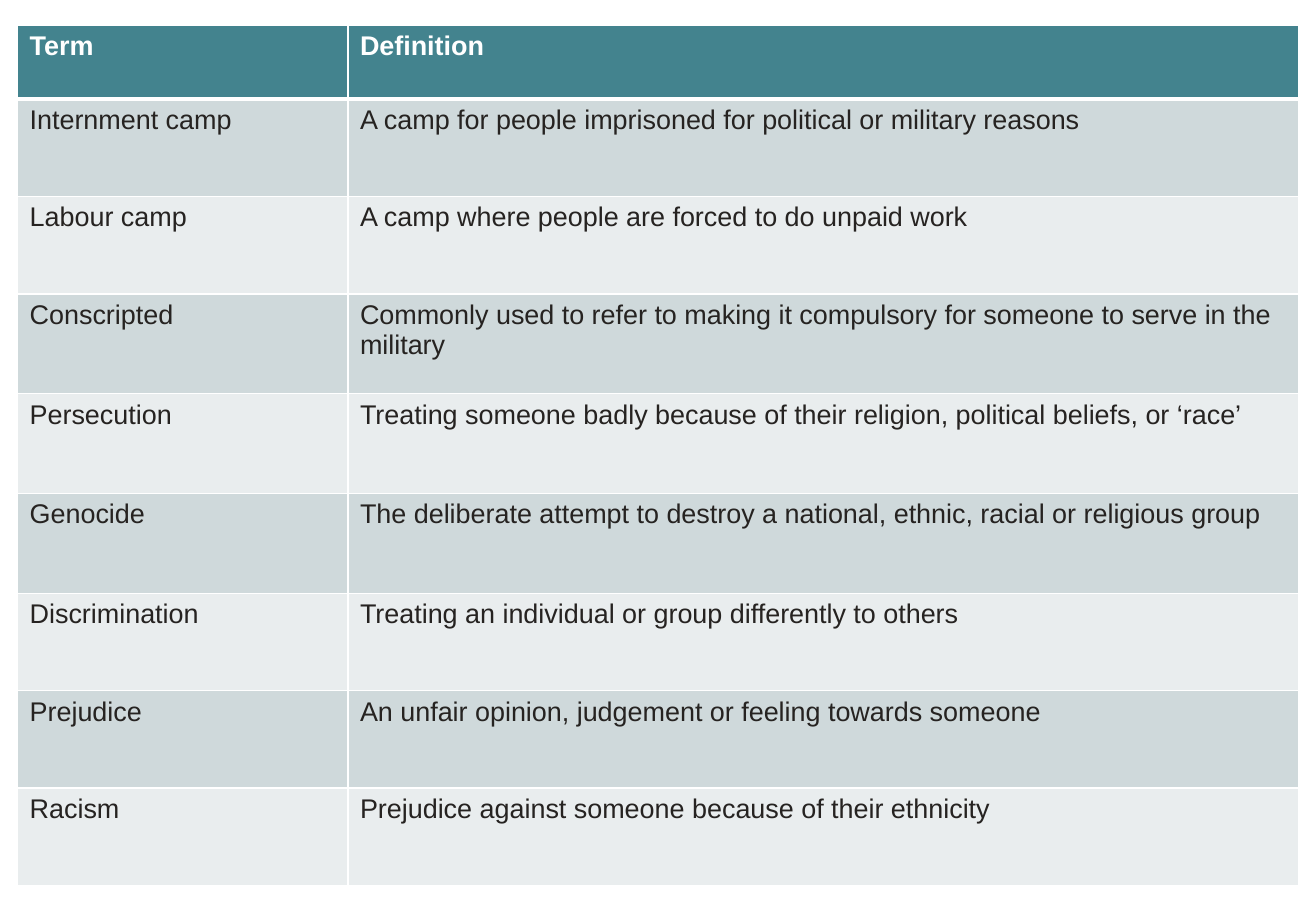
"""Build a one-slide glossary table of terms and definitions."""
import pptx
import pptx.dml.color
import pptx.oxml
import pptx.oxml.ns
import pptx.util

Pt = pptx.util.Pt

COLOURS = {
    "header": "43838E",
    "odd_row": "CFD9DB",
    "even_row": "E9EDEE",
    "rule": "FFFFFF",
    "header_text": "FFFFFF",
    "body_text": "262321",
}

GLOSSARY = [
    ("Term", "Definition"),
    ("Internment camp", "A camp for people imprisoned for political or military reasons"),
    ("Labour camp", "A camp where people are forced to do unpaid work"),
    ("Conscripted", "Commonly used to refer to making it compulsory for someone to serve in the military"),
    ("Persecution", "Treating someone badly because of their religion, political beliefs, or ‘race’"),
    ("Genocide", "The deliberate attempt to destroy a national, ethnic, racial or religious group"),
    ("Discrimination", "Treating an individual or group differently to others"),
    ("Prejudice", "An unfair opinion, judgement or feeling towards someone"),
    ("Racism", "Prejudice against someone because of their ethnicity"),
]

COLUMN_WIDTHS = [195.8, 563.8]
ROW_HEIGHTS = [43.6] + [57.7] * 2 + [59.2] * 3 + [57.7] * 3


def rgb(name):
    return pptx.dml.color.RGBColor.from_string(COLOURS[name])


def write_text(frame, text, size=16, font="Arial", colour="body_text", bold=False):
    run = frame.paragraphs[0].add_run()
    run.text = text
    run.font.size = Pt(size)
    run.font.name = font
    run.font.bold = bold
    run.font.color.rgb = rgb(colour)


def rule_cell(cell, widths):
    properties = cell._tc.get_or_add_tcPr()
    for side in "LRTB":
        properties.append(pptx.oxml.parse_xml(
            f'<a:ln{side} {pptx.oxml.ns.nsdecls("a")} w="{Pt(widths.get(side, 1))}">'
            f'<a:solidFill><a:srgbClr val="{COLOURS["rule"]}"/></a:solidFill>'
            f'</a:ln{side}>'))


def fill_cell(cell, text, row):
    is_header = row == 0
    rule_cell(cell, {"B": 3} if is_header else {"T": 3} if row == 1 else {})
    cell.fill.solid()
    cell.fill.fore_color.rgb = rgb(
        "header" if is_header else "odd_row" if row % 2 else "even_row")
    write_text(cell.text_frame, text, bold=is_header,
               colour="header_text" if is_header else "body_text")


def add_glossary(slide, left, top):
    glossary = slide.shapes.add_table(
        len(GLOSSARY), len(COLUMN_WIDTHS), Pt(left), Pt(top),
        Pt(sum(COLUMN_WIDTHS)), Pt(sum(ROW_HEIGHTS))).table
    for column, width in zip(glossary.columns, COLUMN_WIDTHS):
        column.width = Pt(width)
    for row, (entry, height) in enumerate(zip(GLOSSARY, ROW_HEIGHTS)):
        glossary.rows[row].height = Pt(height)
        for column, text in enumerate(entry):
            fill_cell(glossary.cell(row, column), text, row)


def main():
    deck = pptx.Presentation()
    deck.slide_width = Pt(780)
    deck.slide_height = Pt(540)
    slide = deck.slides.add_slide(deck.slide_layouts[6])
    add_glossary(slide, left=10.4, top=15.2)
    deck.save("out.pptx")


if __name__ == "__main__":
    main()
